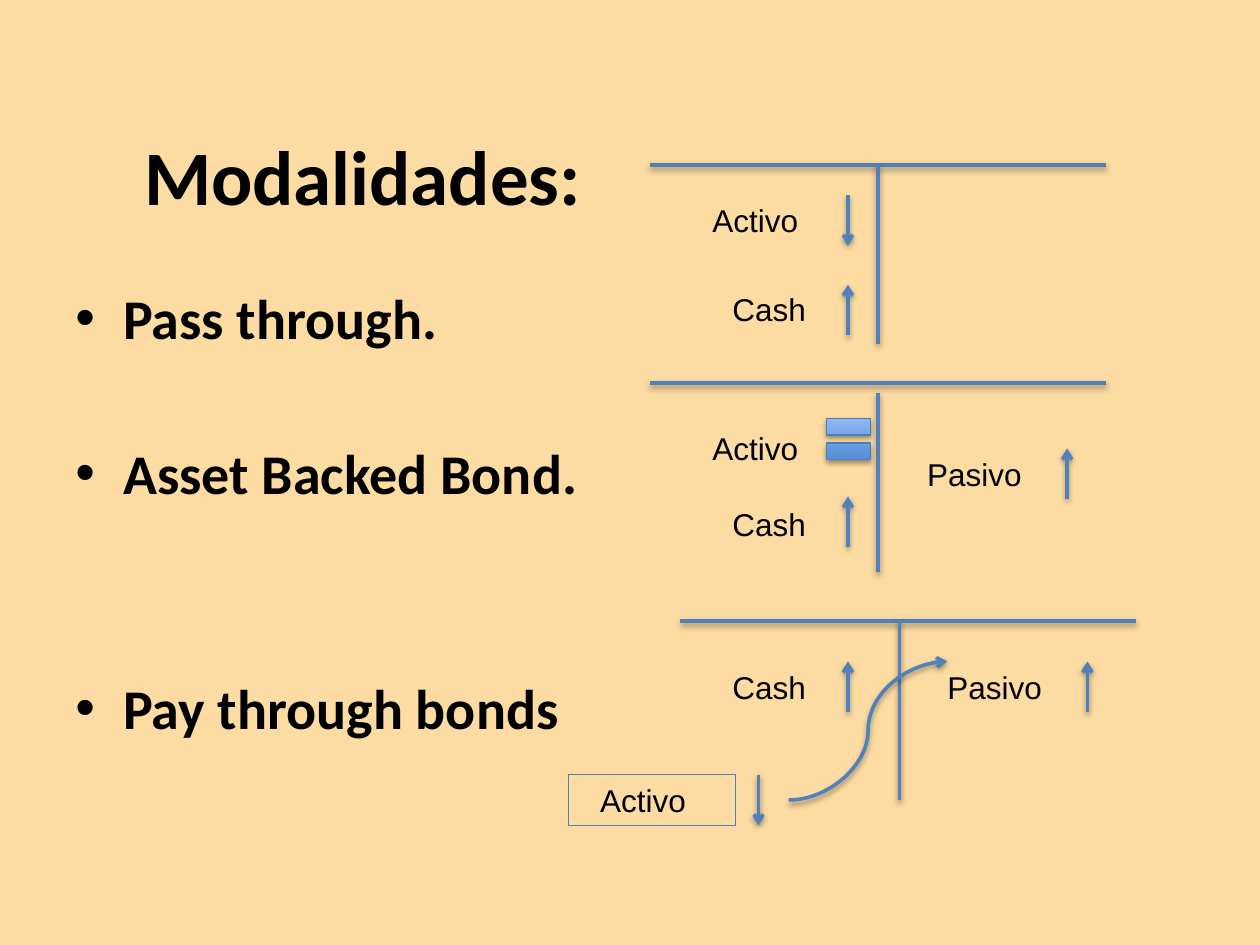
from lxml import etree
from pptx import Presentation
from pptx import util as u
from pptx.dml.color import RGBColor
from pptx.enum import shapes, text
from pptx.oxml.ns import qn

SAND = RGBColor(0xFC, 0xDC, 0xA3)
BLUE = RGBColor(0x4F, 0x81, 0xBD)
EDGE_BLUE = RGBColor(0x4B, 0x7E, 0xBC)
DEEP_BLUE = RGBColor(0x3F, 0x80, 0xCE)
LIGHT_BLUE = RGBColor(0xA4, 0xC4, 0xFF)
BLACK = RGBColor(0, 0, 0)

STRAIGHT = shapes.MSO_CONNECTOR.STRAIGHT
CURVE = shapes.MSO_CONNECTOR.CURVE
LABEL_FONT = {"name": "Arial", "size": u.Pt(18), "bold": False}
TITLE_FONT = {"name": "Calibri", "size": u.Pt(44), "bold": True}
BULLET_FONT = {"name": "Calibri", "size": u.Pt(32), "bold": True}

presentation = Presentation()
presentation.slide_width = u.Inches(10)
presentation.slide_height = u.Inches(7.5)
slide = presentation.slides.add_slide(presentation.slide_layouts[6])


def add_words(paragraph, words, font_format):
    run = paragraph.add_run()
    run.text = words
    for name, value in font_format.items():
        setattr(run.font, name, value)
    run.font.color.rgb = BLACK


def add_shadow(properties):
    effects = etree.SubElement(properties, qn("a:effectLst"))
    shadow = etree.SubElement(effects, qn("a:outerShdw"), blurRad="40000",
                              dist="20000", dir="5400000", rotWithShape="0")
    color = etree.SubElement(shadow, qn("a:srgbClr"), val="000000")
    etree.SubElement(color, qn("a:alpha"), val="38000")


background = slide.shapes.add_shape(
    shapes.MSO_SHAPE.RECTANGLE, 0, 0, presentation.slide_width, presentation.slide_height)
background.shadow.inherit = False
background.fill.solid()
background.fill.fore_color.rgb = SAND
background.line.color.rgb = SAND
background.line.width = u.Pt(0.75)

body = slide.shapes.add_textbox(u.Inches(0.5), u.Inches(1.55), u.Inches(9), u.Inches(5.08))
body.text_frame.word_wrap = True
body.text_frame.margin_top = u.Inches(0.7)
bullets = [("Pass through.", 0), ("Asset Backed Bond.", 50), ("Pay through bonds", 96)]
for index, (words, space) in enumerate(bullets):
    paragraph = body.text_frame.add_paragraph() if index else body.text_frame.paragraphs[0]
    paragraph.space_before = u.Pt(space)
    properties = paragraph._p.get_or_add_pPr()
    properties.set("marL", str(u.Inches(0.38)))
    properties.set("indent", str(u.Inches(-0.38)))
    etree.SubElement(properties, qn("a:buFont"), typeface="Arial")
    etree.SubElement(properties, qn("a:buChar"), char="•")
    add_words(paragraph, words, BULLET_FONT)

title = slide.shapes.add_textbox(u.Inches(0.36), u.Inches(0.76), u.Inches(5.04), u.Inches(1.25))
title.text_frame.word_wrap = True
title.text_frame.vertical_anchor = text.MSO_ANCHOR.MIDDLE
title.text_frame.paragraphs[0].alignment = text.PP_ALIGN.CENTER
add_words(title.text_frame.paragraphs[0], "Modalidades:", TITLE_FONT)

lines = []
for left, top, stem_x, stem_top in [(5.16, 1.31, 6.97, 1.31),
                                    (5.16, 3.04, 6.97, 3.12),
                                    (5.4, 4.93, 7.14, 4.93)]:
    lines.append((STRAIGHT, left, top, left + 3.62, top, False))
    lines.append((STRAIGHT, stem_x, stem_top, stem_x, stem_top + 1.42, False))
for x, start, end in [(6.73, 1.55, 1.95), (6.73, 2.66, 2.26), (6.73, 4.34, 3.94),
                      (8.47, 3.96, 3.56), (6.73, 5.65, 5.25), (8.63, 5.65, 5.25),
                      (6.02, 6.15, 6.55)]:
    lines.append((STRAIGHT, x, start, x, end, True))
lines.append((CURVE, 6.26, 6.35, 7.52, 5.25, True))

for kind, x1, y1, x2, y2, has_arrow in lines:
    connector = slide.shapes.add_connector(
        kind, u.Inches(x1), u.Inches(y1), u.Inches(x2), u.Inches(y2))
    connector.line.color.rgb = BLUE
    connector.line.width = u.Pt(2)
    if has_arrow:
        etree.SubElement(connector.line._get_or_add_ln(), qn("a:tailEnd"), type="arrow")
    add_shadow(connector._element.spPr)

labels = [("Activo", 5.4, 1.55), ("Cash", 5.71, 2.25),
          ("Activo", 5.4, 3.36), ("Cash", 5.71, 3.96), ("Pasivo", 7.14, 3.56),
          ("Activo", 4.51, 6.15), ("Cash", 5.71, 5.25), ("Pasivo", 7.3, 5.25)]
for words, left, top in labels:
    is_cash = words == "Cash"
    label = slide.shapes.add_textbox(u.Inches(left), u.Inches(top),
                                     u.Inches(0.79 if is_cash else 1.33), u.Inches(0.4))
    label.text_frame.word_wrap = not is_cash
    label.text_frame.margin_right = u.Inches(0.1 if is_cash else 0.24)
    label.text_frame.paragraphs[0].alignment = text.PP_ALIGN.CENTER
    add_words(label.text_frame.paragraphs[0], words, LABEL_FONT)
    if top == 6.15:
        label.line.color.rgb = BLUE
        label.line.width = u.Pt(0.75)

equal_sign = slide.shapes.add_shape(
    shapes.MSO_SHAPE.MATH_EQUAL, u.Inches(6.5), u.Inches(3.21), u.Inches(0.47), u.Inches(0.55))
equal_sign.fill.gradient()
equal_sign.fill.gradient_angle = 90
for stop, color, position in zip(equal_sign.fill.gradient_stops, (DEEP_BLUE, LIGHT_BLUE), (0, 1)):
    stop.color.rgb = color
    stop.position = position
equal_sign.line.color.rgb = EDGE_BLUE
equal_sign.line.width = u.Pt(0.75)
add_shadow(equal_sign._element.spPr)

presentation.save("out.pptx")
